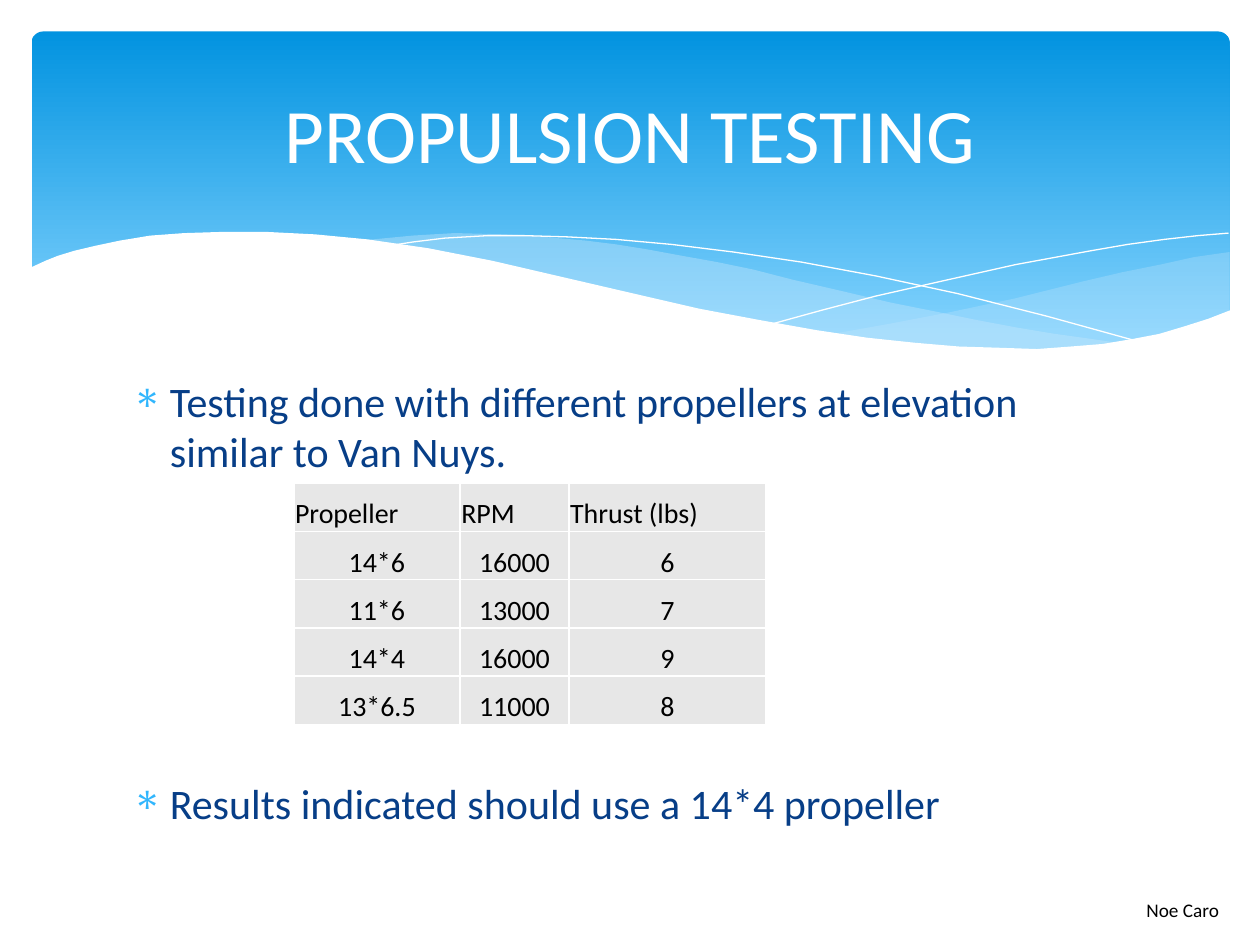
from lxml.etree import SubElement
from pptx import Presentation
from pptx.dml.color import RGBColor
from pptx.enum.shapes import MSO_SHAPE
from pptx.enum.text import MSO_ANCHOR, PP_ALIGN
from pptx.oxml.ns import qn
from pptx.util import Pt

WHITE = RGBColor(0xFF, 0xFF, 0xFF)
BLACK = RGBColor(0x00, 0x00, 0x00)
NAVY = RGBColor(0x07, 0x3E, 0x87)
SKY = RGBColor(0x31, 0xB6, 0xFD)
BAND_TOP = RGBColor(0x02, 0x93, 0xE0)
BAND_BOTTOM = RGBColor(0x83, 0xD3, 0xFE)
PALE_BLUE = RGBColor(0xC6, 0xE7, 0xFC)
CELL_GREY = RGBColor(0xE7, 0xE7, 0xE7)
FONT = "Calibri"
WAVE_UNIT = Pt(0.72)

deck = Presentation()
deck.slide_width, deck.slide_height = Pt(720), Pt(540)
page = deck.slides.add_slide(deck.slide_layouts[6])


def add_wave(points, color, opacity=None):
    closed = color is not None
    builder = page.shapes.build_freeform(*points[0], scale=WAVE_UNIT)
    builder.add_line_segments(points[1:], close=closed)
    wave = builder.convert_to_shape()
    wave.shadow.inherit = False
    if closed:
        wave.fill.solid()
        wave.fill.fore_color.rgb = color
        wave.line.fill.background()
    else:
        wave.fill.background()
        wave.line.color.rgb = WHITE
        wave.line.width = Pt(0)
    if opacity:
        tint = wave.fill._xPr.find(qn("a:solidFill"))[0]
        SubElement(tint, qn("a:alpha"), val=str(opacity * 1000))


def style_text(paragraph, text, size, color, align=PP_ALIGN.LEFT):
    paragraph.text = text
    paragraph.alignment = align
    paragraph.font.name = FONT
    paragraph.font.size = Pt(size)
    paragraph.font.color.rgb = color


band = page.shapes.add_shape(MSO_SHAPE.ROUNDED_RECTANGLE, Pt(18), Pt(18), Pt(684.7), Pt(194.4))
band.adjustments[0] = 0.034
band.shadow.inherit = False
band.line.fill.background()
band.fill.gradient()
band.fill.gradient_angle = 270
for stop, position, color in zip(band.fill.gradient_stops, (0, 0.9), (BAND_TOP, BAND_BOTTOM)):
    stop.position = position
    stop.color.rgb = color

right_wave = [
    (976, 200), (948, 204), (921, 210), (891, 216), (861, 223), (805, 237), (753, 248),
    (706, 257), (661, 265), (691, 269), (719, 272), (745, 275), (769, 277), (803, 278),
    (835, 277), (863, 275), (889, 272), (913, 267), (935, 262), (949, 257), (963, 252), (976, 247),
]
middle_wave = [
    (893, 273), (866, 269), (837, 265), (807, 260), (775, 254), (741, 247), (706, 240),
    (668, 231), (629, 222), (598, 214), (569, 208), (541, 203), (514, 198), (489, 194),
    (465, 191), (442, 189), (420, 187), (399, 186), (361, 185), (328, 187), (286, 191),
    (323, 196), (362, 203), (404, 211), (449, 222), (491, 232), (530, 240), (566, 248),
    (601, 255), (634, 261), (665, 266), (695, 270), (722, 274), (748, 276), (773, 277),
    (807, 278), (838, 278), (867, 276),
]
falling_line = [
    (309, 195), (328, 192), (353, 189), (387, 187), (416, 187), (450, 188), (489, 190),
    (533, 194), (582, 200), (636, 208), (695, 219), (760, 233), (831, 251), (907, 272),
]
rising_line = [
    (613, 257), (653, 246), (695, 235), (748, 223), (806, 210), (866, 199), (895, 194),
    (924, 190), (951, 187), (975, 185),
]
white_wave = [
    (977, 246), (959, 253), (940, 259), (920, 265), (899, 269), (875, 273), (850, 275),
    (823, 277), (793, 276), (761, 275), (726, 272), (688, 268), (648, 262), (603, 254),
    (555, 245), (503, 233), (447, 220), (391, 207), (340, 197), (292, 190), (250, 186),
    (211, 184), (177, 184), (146, 185), (119, 187), (95, 191), (76, 195), (59, 199),
    (46, 203), (36, 207), (23, 213), (23, 329), (977, 329),
]
add_wave(right_wave, PALE_BLUE, 29)
add_wave(middle_wave, PALE_BLUE, 40)
add_wave(falling_line, None)
add_wave(rising_line, None)
add_wave(white_wave, WHITE)

title = page.shapes.add_textbox(Pt(36), Pt(26.64), Pt(648), Pt(98.64)).text_frame
title.word_wrap = True
title.vertical_anchor = MSO_ANCHOR.MIDDLE
style_text(title.paragraphs[0], "PROPULSION TESTING", 44, WHITE, PP_ALIGN.CENTER)

body = page.shapes.add_textbox(Pt(68.4), Pt(210.96), Pt(583.2), Pt(271.44)).text_frame
body.word_wrap = True
body.add_paragraph().space_before = Pt(172)
findings = [
    "Testing done with different propellers at elevation similar to Van Nuys.",
    "Results indicated should use a 14*4 propeller",
]
for paragraph, finding in zip(body.paragraphs, findings):
    style_text(paragraph, finding, 24, NAVY)
    properties = paragraph._p.get_or_add_pPr()
    properties.set("marL", str(Pt(21.6)))
    properties.set("indent", str(-Pt(21.6)))
    bullet_color = SubElement(properties, qn("a:buClr"))
    SubElement(bullet_color, qn("a:srgbClr"), val=str(SKY))
    SubElement(properties, qn("a:buChar"), char="∗")
    properties.append(properties.find(qn("a:defRPr")))

results = [
    ("Propeller", "RPM", "Thrust (lbs)"),
    ("14*6", "16000", "6"),
    ("11*6", "13000", "7"),
    ("14*4", "16000", "9"),
    ("13*6.5", "11000", "8"),
]
table = page.shapes.add_table(5, 3, Pt(167.9), Pt(276), Pt(269.7), Pt(138)).table
for column, width in zip(table.columns, (95, 62.2, 112.5)):
    column.width = Pt(width)
for row_index, values in enumerate(results):
    table.rows[row_index].height = Pt(27.6)
    for column_index, value in enumerate(values):
        cell = table.cell(row_index, column_index)
        cell.margin_left = cell.margin_right = cell.margin_top = Pt(0.72)
        cell.margin_bottom = 0
        cell.vertical_anchor = MSO_ANCHOR.BOTTOM
        align = PP_ALIGN.CENTER if row_index else PP_ALIGN.LEFT
        style_text(cell.text_frame.paragraphs[0], value, 16, BLACK, align)
        cell.text_frame.paragraphs[0].font.bold = False
        properties = cell._tc.get_or_add_tcPr()
        for side in ("lnL", "lnR", "lnT", "lnB"):
            border = SubElement(properties, qn(f"a:{side}"), w=str(Pt(1)))
            SubElement(SubElement(border, qn("a:solidFill")), qn("a:srgbClr"), val=str(WHITE))
        cell.fill.solid()
        cell.fill.fore_color.rgb = CELL_GREY

author = page.shapes.add_textbox(Pt(648), Pt(509.76), Pt(72), Pt(20.88)).text_frame
author.word_wrap = True
style_text(author.paragraphs[0], "Noe Caro", 11, BLACK)

deck.save("out.pptx")
